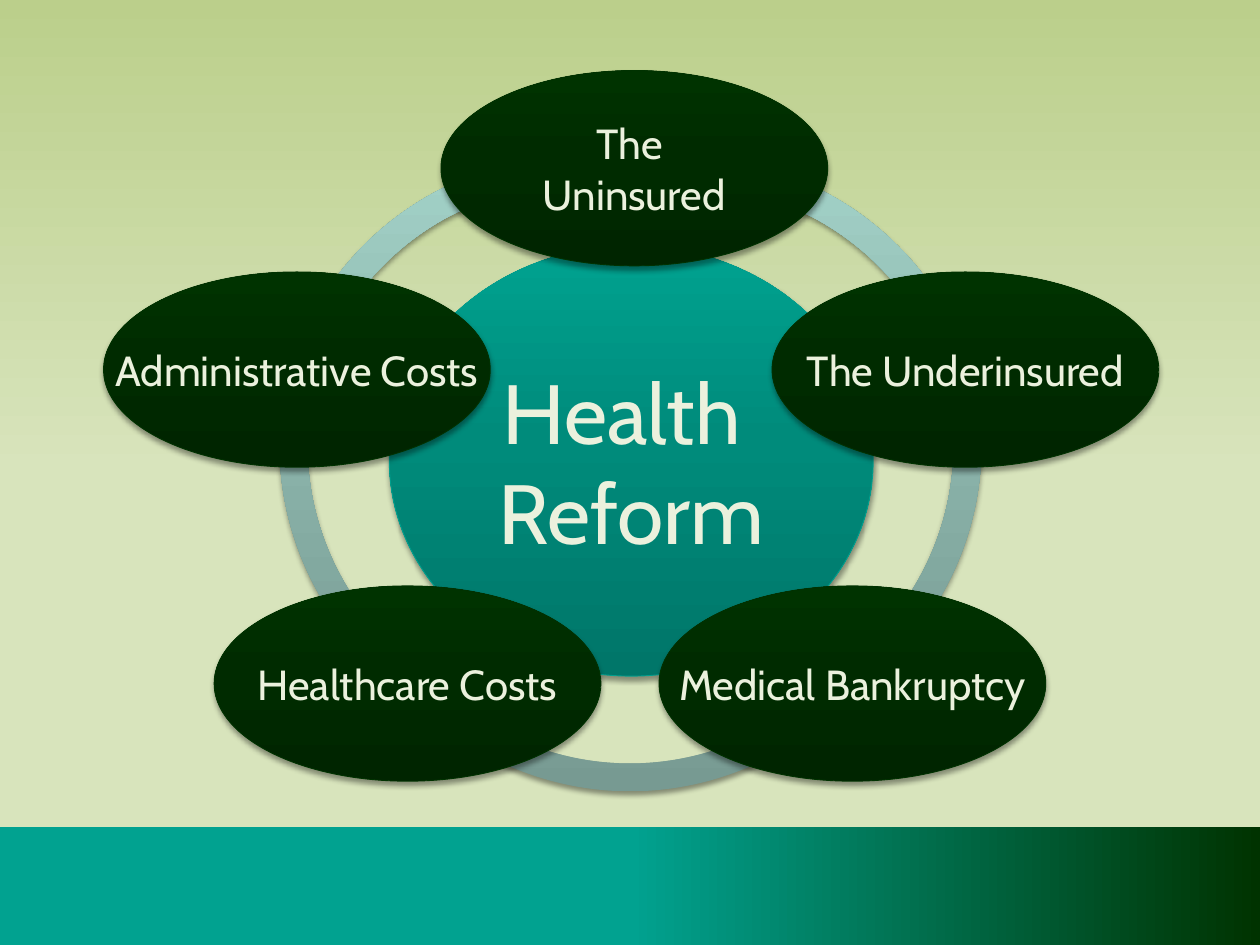
from pptx import Presentation
from pptx.dml.color import RGBColor
from pptx.enum.shapes import MSO_SHAPE as Kind
from pptx.enum.text import MSO_ANCHOR as Anchor, PP_ALIGN as Align
from pptx.oxml import parse_xml
from pptx.oxml.ns import nsdecls, qn
from pptx.util import Pt

# Content: text, left, top
NODES = [
    ("The \nUninsured", 252, 40.3),
    ("The Underinsured", 441.2, 155.4),
    ("Medical Bankruptcy", 376.6, 334.8),
    ("Healthcare Costs", 122.4, 334.8),
    ("Administrative Costs", 59.2, 155.4),
]
HUB = "Health \nReform"

# Ring pieces: left, top, start and end in degrees, clockwise from the right
ARCS = [
    (157.7, 89.3, 197.6, 280.88),
    (159.8, 81.4, 126.28, 194.94),
    (187.2, 106.6, 41.11, 138.89),
    (215.3, 81.4, 345.26, 54.06),
    (218.2, 90, 260.36, 342.17),
]
ARC_SIZE = 345.6
NODE_W, NODE_H = 221, 111.6

# Gradient stops: percent, colour
SKY = [(0, "BBCF8B"), (50, "D8E4BC"), (100, "D8E4BC")]
BAND = [(27, "01A290"), (50, "01A290"), (100, "003300")]
RING = [(0, "779A92"), (55, "8CB5AC"), (100, "A3D2C8")]
TEAL = [(0, "007669"), (55, "008B7B"), (100, "00A290")]
DARK = [(0, "002500"), (55, "002B00"), (100, "003300")]
CREAM = "EBF1DD"


def rgb(code):
    return RGBColor.from_string(code)


def blend(part, fill, stops, angle):
    """Fill with a linear gradient; the angle runs counter-clockwise."""
    fill.gradient()
    fill.gradient_angle = angle
    found = part.element.find(".//" + qn("a:gsLst"))
    for old in list(found):
        found.remove(old)
    for pos, code in stops:
        found.append(parse_xml(
            f'<a:gs {nsdecls("a")} pos="{pos * 1000}">'
            f'<a:srgbClr val="{code}"/></a:gs>'))


def add(kind, box, stops, angle=90, edge=None, shade=True):
    shape = slide.shapes.add_shape(kind, *map(Pt, box))
    blend(shape, shape.fill, stops, angle)
    if edge:
        shape.line.color.rgb = rgb(edge)
        shape.line.width = Pt(0.5)
    else:
        shape.line.fill.background()
    shape.shadow.inherit = False
    if shade:
        shape.element.spPr.find(qn("a:effectLst")).append(parse_xml(
            f'<a:outerShdw {nsdecls("a")} blurRad="{Pt(3.1)}" dist="{Pt(2)}" '
            'dir="5400000" rotWithShape="0"><a:srgbClr val="000000">'
            '<a:alpha val="38000"/></a:srgbClr></a:outerShdw>'))
    return shape


def label(shape, text, size, inset):
    frame = shape.text_frame
    frame.text = text
    frame.word_wrap = False
    frame.vertical_anchor = Anchor.MIDDLE
    frame.margin_left = frame.margin_right = Pt(inset)
    frame.margin_top = frame.margin_bottom = Pt(inset)
    for para in frame.paragraphs:
        para.alignment = Align.CENTER
        for run in para.runs:
            run.font.name = "Cabin"
            run.font.size = Pt(size)
            run.font.color.rgb = rgb(CREAM)


deck = Presentation()
deck.slide_width, deck.slide_height = Pt(720), Pt(540)
slide = deck.slides.add_slide(deck.slide_layouts[6])

# Background and bottom band
blend(slide, slide.background.fill, SKY, 270)
add(Kind.RECTANGLE, (0, 472.5, 720, 67.5), BAND, 0, shade=False)

# Ring; an adjustment of 0.6 turns the arc's end by one degree
for left, top, start, end in ARCS:
    arc = add(Kind.BLOCK_ARC, (left, top, ARC_SIZE, ARC_SIZE), RING)
    for i, value in enumerate((start * 0.6, end * 0.6, 0.046)):
        arc.adjustments[i] = value

# Hub
hub = add(Kind.OVAL, (222.5, 140.4, 276.5, 246), TEAL, edge="009F8E")
label(hub, HUB, 48, 5)

# Outer topics
for text, left, top in NODES:
    node = add(Kind.OVAL, (left, top, NODE_W, NODE_H), DARK, edge="003200")
    label(node, text, 24, 2)

deck.save("out.pptx")
